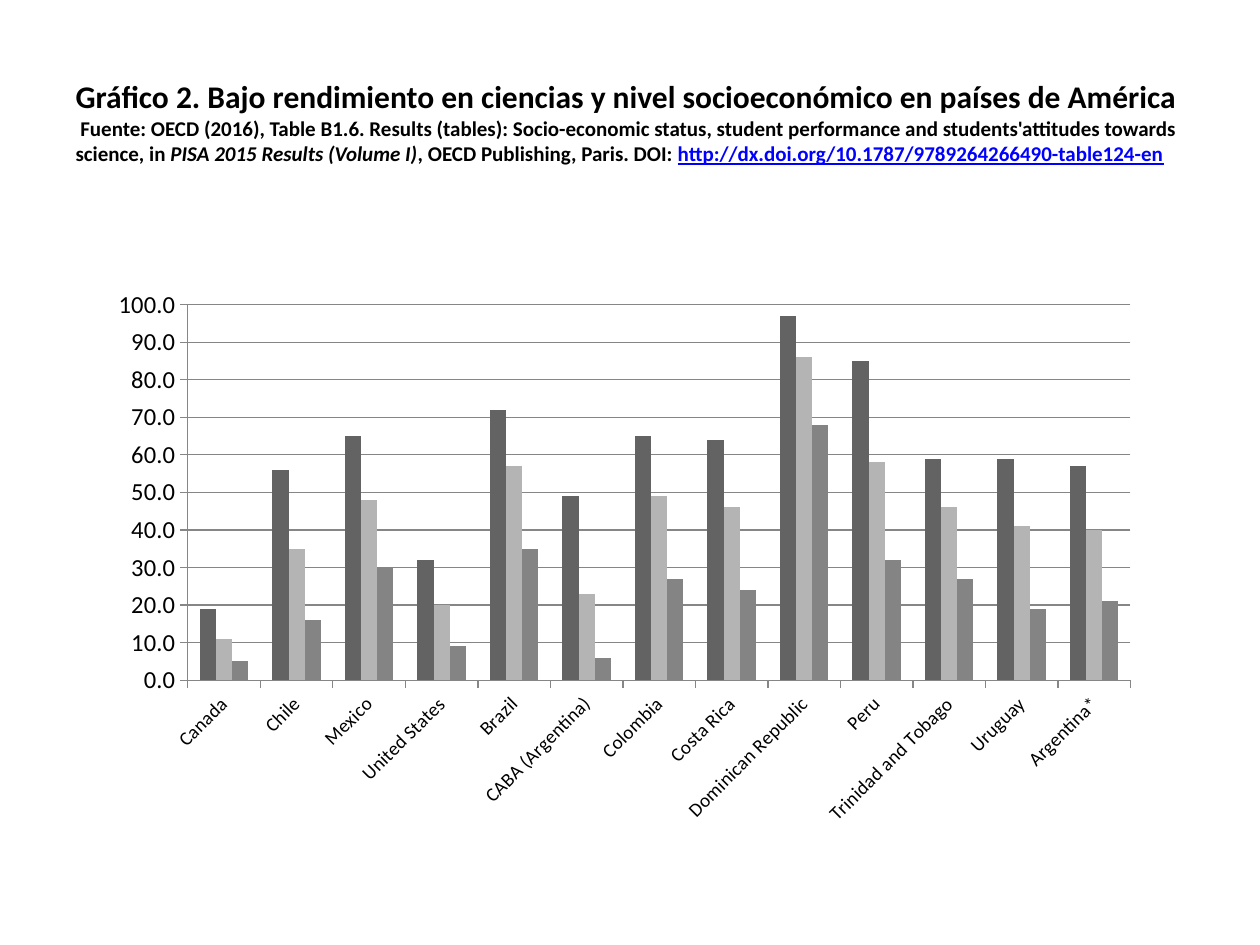
from lxml import etree
from pptx import Presentation
from pptx.chart.data import CategoryChartData
from pptx.dml.color import RGBColor
from pptx.enum.chart import XL_CHART_TYPE, XL_TICK_MARK
from pptx.enum.text import MSO_ANCHOR, MSO_AUTO_SIZE, PP_ALIGN
from pptx.oxml.ns import qn
from pptx.util import Inches, Pt

CLUSTERED = XL_CHART_TYPE.COLUMN_CLUSTERED
OUTSIDE = XL_TICK_MARK.OUTSIDE
MIDDLE = MSO_ANCHOR.MIDDLE
NO_FIT = MSO_AUTO_SIZE.NONE
LEFT = PP_ALIGN.LEFT

FONT = "Calibri"
COLORS = {
    "text": "000000",
    "link": "0000FF",
    "axis": "868686",
    "Series 1": "636363",
    "Series 2": "B4B4B4",
    "Series 3": "848484",
}
COUNTRIES = [
    "Canada", "Chile", "Mexico", "United States", "Brazil", "CABA (Argentina)",
    "Colombia", "Costa Rica", "Dominican Republic", "Peru",
    "Trinidad and Tobago", "Uruguay", "Argentina*",
]
SERIES = {
    "Series 1": [19, 56, 65, 32, 72, 49, 65, 64, 97, 85, 59, 59, 57],
    "Series 2": [11, 35, 48, 20, 57, 23, 49, 46, 86, 58, 46, 41, 40],
    "Series 3": [5, 16, 30, 9, 35, 6, 27, 24, 68, 32, 27, 19, 21],
}
HEADING = "Gráfico 2. Bajo rendimiento en ciencias y nivel socioeconómico en países de América"
SOURCE = (
    " Fuente: OECD (2016), Table B1.6. Results (tables): Socio-economic status, "
    "student performance and students'attitudes towards science, in "
)
REPORT = "PISA 2015 Results (Volume I)"
PUBLISHER = ", OECD Publishing, Paris. DOI: "
ADDRESS = "http://dx.doi.org/10.1787/9789264266490-table124-en"


def rgb(name):
    return RGBColor.from_string(COLORS[name])


def add_run(p, text, size, color="text", italic=False, underline=False):
    r = p.add_run()
    r.text = text
    font = r.font
    font.name = FONT
    font.size = Pt(size)
    font.bold = True
    font.italic = italic
    font.underline = underline
    font.color.rgb = rgb(color)


def fill_title(sp):
    sp.left, sp.top = Inches(0.5), Inches(0.3)
    sp.width, sp.height = Inches(9), Inches(1.57)
    tf = sp.text_frame
    tf.word_wrap = True
    tf.auto_size = NO_FIT
    tf.vertical_anchor = MIDDLE
    tf.margin_bottom = Inches(0.29)
    heading, source = tf.paragraphs[0], tf.add_paragraph()
    heading.alignment = source.alignment = LEFT
    add_run(heading, HEADING, 18)
    add_run(source, SOURCE, 12)
    add_run(source, REPORT, 12, italic=True)
    add_run(source, PUBLISHER, 12)
    add_run(source, ADDRESS, 12, color="link", underline=True)


def style_axis(axis, size):
    axis.major_tick_mark = OUTSIDE
    axis.tick_labels.font.size = Pt(size)
    axis.format.line.color.rgb = rgb("axis")
    axis.format.line.width = Pt(0.75)


def set_plot_area(chart, x, y, w, h):
    area = chart.plots[0]._element.getparent()
    layout = area.find(qn("c:layout"))
    if layout is None:
        layout = etree.Element(qn("c:layout"))
        area.insert(0, layout)
    manual = etree.SubElement(layout, qn("c:manualLayout"))
    settings = {
        "layoutTarget": "inner", "xMode": "edge", "yMode": "edge",
        "x": x, "y": y, "w": w, "h": h,
    }
    for tag, value in settings.items():
        etree.SubElement(manual, qn(f"c:{tag}")).set("val", str(value))


def add_column_chart(s):
    data = CategoryChartData(number_format="0.0")
    data.categories = COUNTRIES
    for name, values in SERIES.items():
        data.add_series(name, values)
    chart = s.shapes.add_chart(
        CLUSTERED, Inches(0.78), Inches(2.21), Inches(8.36), Inches(4.43), data
    ).chart
    chart.has_legend = False
    chart.has_title = False
    chart.font.name = FONT
    chart.font.size = Pt(11)
    chart.font.color.rgb = rgb("text")

    plot = chart.plots[0]
    plot.gap_width = 150
    plot.overlap = 0
    plot.vary_by_categories = False
    for series in plot.series:
        series.format.fill.solid()
        series.format.fill.fore_color.rgb = rgb(series.name)

    countries, percent = chart.category_axis, chart.value_axis
    style_axis(countries, 11)
    body = countries._element.find(qn("c:txPr")).find(qn("a:bodyPr"))
    body.set("rot", "-2700000")
    style_axis(percent, 14)
    percent.minimum_scale, percent.maximum_scale = 0, 100
    percent.major_unit = 10
    percent.tick_labels.number_format = "0.0"
    percent.tick_labels.number_format_is_linked = False
    percent.has_major_gridlines = True
    grid = percent.major_gridlines.format.line
    grid.color.rgb = rgb("axis")
    grid.width = Pt(0.75)
    set_plot_area(chart, 0.085, 0.047, 0.895, 0.673)


def main():
    prs = Presentation()
    prs.slide_width, prs.slide_height = Inches(10), Inches(7.5)
    s = prs.slides.add_slide(prs.slide_layouts[5])
    fill_title(s.shapes.title)
    add_column_chart(s)
    prs.save("out.pptx")


if __name__ == "__main__":
    main()
